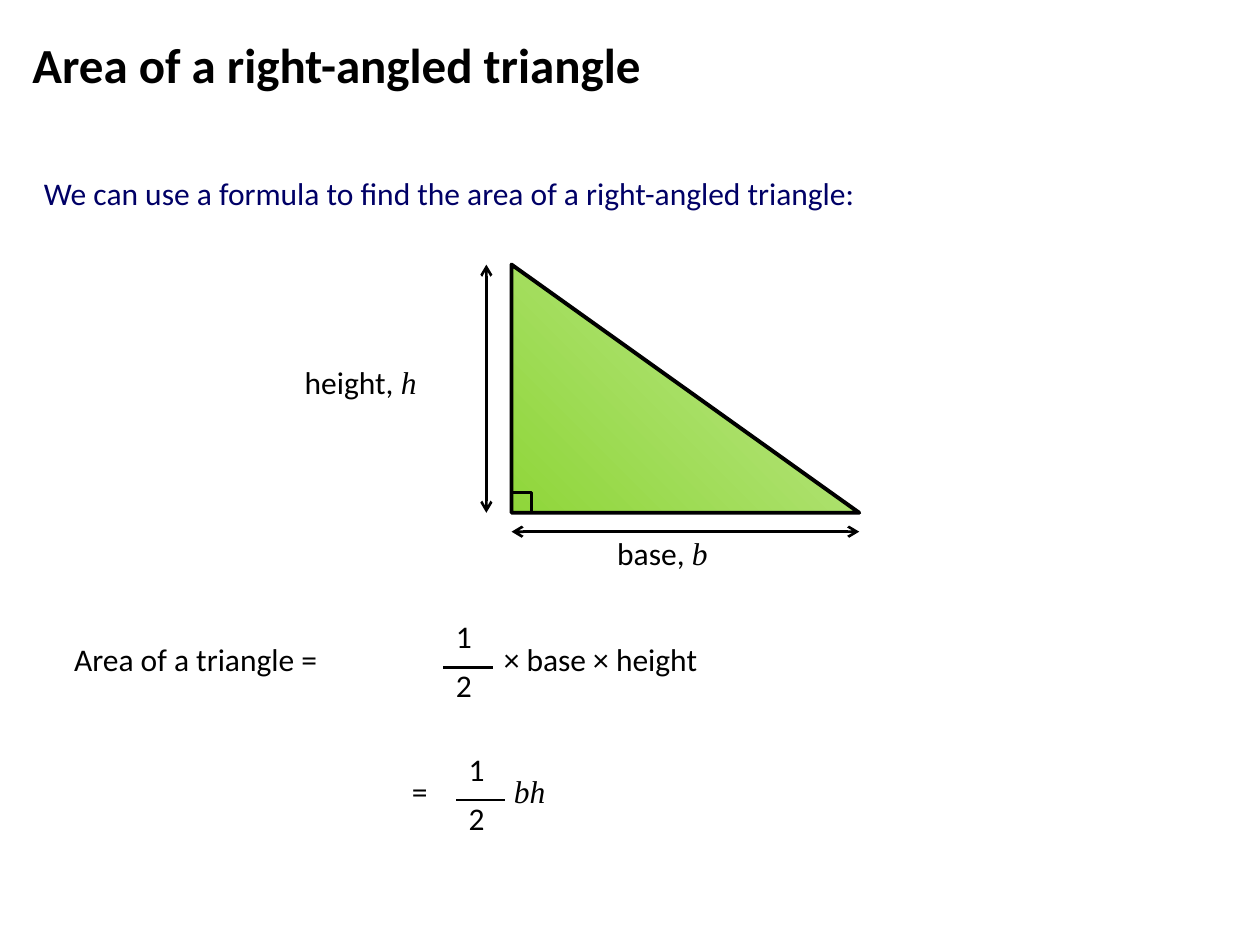
from lxml.etree import SubElement
from pptx import Presentation
from pptx.dml.color import RGBColor
from pptx.enum.shapes import MSO_CONNECTOR, MSO_SHAPE
from pptx.enum.text import MSO_ANCHOR
from pptx.oxml.ns import qn
from pptx.util import Inches, Pt

COLORS = {
    "ink": "000000",
    "intro": "000066",
    "green": "8FD63A",
    "pale_green": "C0E890",
}


def add_text(shapes, text, left, top, width, height=0.5, size=18,
             color="ink", bold=False, symbol="", anchor=MSO_ANCHOR.TOP):
    """Add a text box; symbol is an italic serif variable after the text."""
    box = shapes.add_textbox(Inches(left), Inches(top), Inches(width), Inches(height))
    frame = box.text_frame
    frame.word_wrap = True
    frame.vertical_anchor = anchor
    for words, font_name, italic in ((text, "Calibri", False),
                                     (symbol, "Times New Roman", True)):
        if words:
            run = frame.paragraphs[0].add_run()
            run.text = words
            run.font.name = font_name
            run.font.size = Pt(size)
            run.font.bold = bold
            run.font.italic = italic
            run.font.color.rgb = RGBColor.from_string(COLORS[color])


def add_line(shapes, x1, y1, x2, y2, arrows=False):
    line = shapes.add_connector(MSO_CONNECTOR.STRAIGHT, Inches(x1), Inches(y1),
                                Inches(x2), Inches(y2))
    line.line.color.rgb = RGBColor.from_string(COLORS["ink"])
    line.line.width = Pt(1.5)
    if arrows:
        for end in ("a:headEnd", "a:tailEnd"):
            SubElement(line.line._get_or_add_ln(), qn(end), type="arrow")
    SubElement(line._element.spPr, qn("a:effectLst"))


prs = Presentation()
prs.slide_width = Inches(10)
prs.slide_height = Inches(7.5)
slide = prs.slides.add_slide(prs.slide_layouts[6])
shapes = slide.shapes

add_text(shapes, "We can use a formula to find the area of a right-angled triangle:",
         0.25, 1.33, 9, 0.9, color="intro")
add_text(shapes, "Area of a right-angled triangle", 0.16, 0.16, 9, 0.69,
         size=28, bold=True, anchor=MSO_ANCHOR.MIDDLE)

# Triangle with its dimensions
left, top, base, height = 4.06, 2.1, 2.76, 1.97
right, bottom = left + base, top + height
triangle = shapes.add_shape(MSO_SHAPE.RIGHT_TRIANGLE, Inches(left), Inches(top),
                            Inches(base), Inches(height))
triangle.shadow.inherit = False
triangle.fill.gradient()
triangle.fill.gradient_angle = 45
for stop, shade in zip(triangle.fill.gradient_stops, ("green", "pale_green")):
    stop.color.rgb = RGBColor.from_string(COLORS[shade])
triangle.line.color.rgb = RGBColor.from_string(COLORS["ink"])
triangle.line.width = Pt(2.25)

add_line(shapes, left - 0.2, top, left - 0.2, bottom, arrows=True)
add_line(shapes, left, bottom + 0.15, right, bottom + 0.15, arrows=True)
add_text(shapes, "base, ", 4.8, 4.19, 1.28, symbol="b")
add_text(shapes, "height, ", 2.32, 2.83, 1.46, symbol="h")

# Formula in words, then in symbols: each is lead, one half, remainder
formulas = [
    (3.52, 4.85, ("Area of a triangle =", 0.49, 3.03), ("× base × height", "", 3.9, 2.5)),
    (3.62, 5.9, ("=", 3.17, 0.49), ("", "bh", 3.98, 0.53)),
]
for half_left, half_top, lead, remainder in formulas:
    formula = shapes.add_group_shape().shapes
    lead_text, lead_left, lead_width = lead
    rest_text, rest_symbol, rest_left, rest_width = remainder
    middle_top = half_top + 0.18
    bar_y = half_top + 0.45
    add_text(formula, lead_text, lead_left, middle_top, lead_width)
    add_text(formula, "1", half_left, half_top, 0.39)
    add_line(formula, half_left, bar_y, half_left + 0.39, bar_y)
    add_text(formula, "2", half_left, half_top + 0.39, 0.39)
    add_text(formula, rest_text, rest_left, middle_top, rest_width, symbol=rest_symbol)

# Right-angle mark
mark = 0.16
right_angle = shapes.add_shape(MSO_SHAPE.RECTANGLE, Inches(left), Inches(bottom - mark),
                               Inches(mark), Inches(mark))
right_angle.shadow.inherit = False
right_angle.fill.background()
right_angle.line.color.rgb = RGBColor.from_string(COLORS["ink"])
right_angle.line.width = Pt(1.5)

prs.save("out.pptx")
